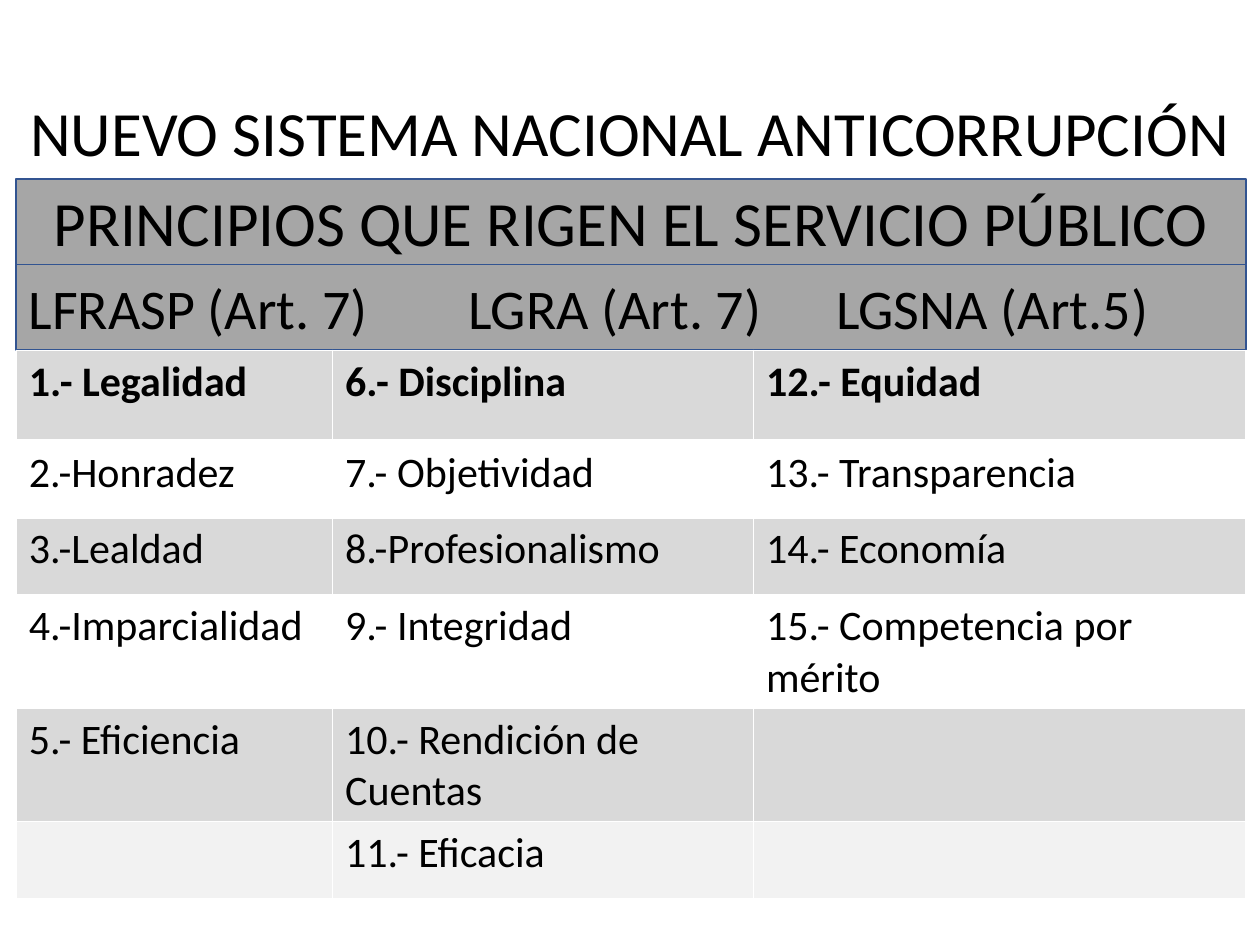
"""Builds the slide on the principles that govern public service."""
from lxml import etree
from pptx import Presentation
from pptx import util as u
from pptx.dml.color import RGBColor
from pptx.enum import shapes, text
from pptx.oxml.ns import qn

COLORS = {"ink": "000000", "banner": "A6A6A6", "outline": "325491",
          "band": "D9D9D9", "plain": "FFFFFF", "last": "F2F2F2"}
LEFT, WIDTH, BANNER_HEIGHT = 0.13, 9.76, 0.68
COLUMN_WIDTHS = [2.51, 3.34, 3.91]
ROW_HEIGHTS = [0.72, 0.61, 0.61, 0.77, 0.77, 0.61]
ROW_FILLS = ["band", "plain", "band", "plain", "band", "last"]
PRINCIPLES = [
    ["1.- Legalidad", "6.- Disciplina", "12.- Equidad"],
    ["2.-Honradez", "7.- Objetividad", "13.- Transparencia"],
    ["3.-Lealdad", "8.-Profesionalismo", "14.- Economía"],
    ["4.-Imparcialidad", "9.- Integridad", "15.- Competencia por mérito"],
    ["5.- Eficiencia", "10.- Rendición de Cuentas", ""],
    ["", "11.- Eficacia", ""],
]


def color(name):
    return RGBColor.from_string(COLORS[name])


def write(frame, content, size, align=text.PP_ALIGN.LEFT, bold=False, tabs=()):
    paragraph = frame.paragraphs[0]
    paragraph.text = content
    paragraph.alignment = align
    if tabs:
        tab_list = etree.SubElement(paragraph._p.get_or_add_pPr(), qn("a:tabLst"))
        for position in tabs:
            etree.SubElement(tab_list, qn("a:tab"), pos=str(u.Inches(position)), algn="l")
    for run in paragraph.runs:
        run.font.name = "Calibri"
        run.font.size = u.Pt(size)
        run.font.bold = bold
        run.font.color.rgb = color("ink")
    return paragraph


def add_title(slide, content):
    box = slide.shapes.add_textbox(u.Inches(0), u.Inches(0.74), u.Inches(10), u.Inches(0.68))
    box.text_frame.word_wrap = True
    box.text_frame.vertical_anchor = text.MSO_ANCHOR.MIDDLE
    write(box.text_frame, content, 36, text.PP_ALIGN.CENTER).line_spacing = 0.9


def add_banner(slide, top, content, size, align, tabs=()):
    shape = slide.shapes.add_shape(shapes.MSO_SHAPE.RECTANGLE, u.Inches(LEFT), u.Inches(top),
                                   u.Inches(WIDTH), u.Inches(BANNER_HEIGHT))
    shape.shadow.inherit = False
    shape.fill.solid()
    shape.fill.fore_color.rgb = color("banner")
    shape.line.color.rgb = color("outline")
    shape.line.width = u.Pt(1)
    shape.text_frame.word_wrap = True
    shape.text_frame.vertical_anchor = text.MSO_ANCHOR.MIDDLE
    write(shape.text_frame, content, size, align, tabs=tabs)


def set_borders(cell, bottom):
    properties = cell._tc.get_or_add_tcPr()
    for side, width in (("L", 1), ("R", 1), ("T", 1), ("B", bottom)):
        line = etree.SubElement(properties, qn(f"a:ln{side}"), w=str(u.Pt(width)))
        fill = etree.SubElement(line, qn("a:solidFill"))
        etree.SubElement(fill, qn("a:srgbClr"), val=COLORS["plain"])


def add_principles_table(slide, top):
    frame = slide.shapes.add_table(len(ROW_HEIGHTS), len(COLUMN_WIDTHS), u.Inches(LEFT),
                                   u.Inches(top), u.Inches(WIDTH), u.Inches(sum(ROW_HEIGHTS)))
    table = frame.table
    table.first_row = table.horz_banding = False
    for column, width in zip(table.columns, COLUMN_WIDTHS):
        column.width = u.Inches(width)
    for index, (row, height) in enumerate(zip(table.rows, ROW_HEIGHTS)):
        row.height = u.Inches(height)
        for cell, content in zip(row.cells, PRINCIPLES[index]):
            set_borders(cell, bottom=3 if index == 0 else 1)
            cell.fill.solid()
            cell.fill.fore_color.rgb = color(ROW_FILLS[index])
            write(cell.text_frame, content, 24, bold=index == 0)


def main():
    presentation = Presentation()
    presentation.slide_width, presentation.slide_height = u.Inches(10), u.Inches(7.5)
    slide = presentation.slides.add_slide(presentation.slide_layouts[6])
    add_title(slide, "NUEVO SISTEMA NACIONAL ANTICORRUPCIÓN")
    add_banner(slide, 1.42, "PRINCIPIOS QUE RIGEN EL SERVICIO PÚBLICO", 36,
               text.PP_ALIGN.CENTER)
    add_banner(slide, 2.1, "LFRASP (Art. 7)\tLGRA (Art. 7)\tLGSNA (Art.5)", 32,
               text.PP_ALIGN.LEFT, tabs=(3.49, 6.41))
    add_principles_table(slide, 2.78)
    presentation.save("out.pptx")


if __name__ == "__main__":
    main()
